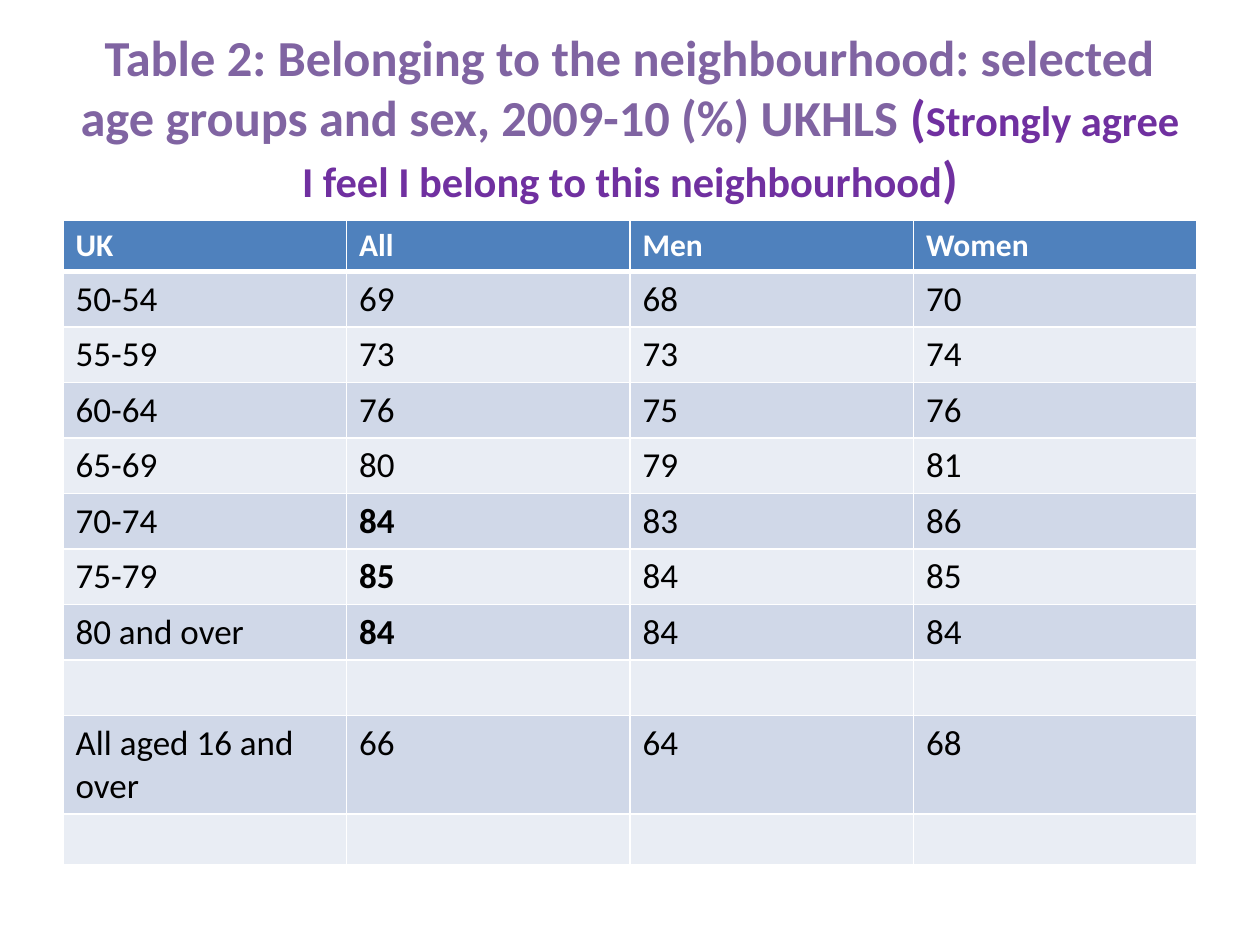
from dataclasses import dataclass

from lxml import etree
from pptx import Presentation
from pptx.dml.color import RGBColor
from pptx.enum.text import MSO_ANCHOR, MSO_AUTO_SIZE, PP_ALIGN
from pptx.oxml.ns import qn
from pptx.util import Inches, Pt

CENTER = PP_ALIGN.CENTER
MIDDLE = MSO_ANCHOR.MIDDLE
NO_AUTOFIT = MSO_AUTO_SIZE.NONE
TITLE_ONLY = 5


@dataclass(frozen=True)
class Theme:
    font: str = "Calibri"
    title: str = "8064A2"
    question: str = "7030A0"
    header_fill: str = "4F81BD"
    header_text: str = "FFFFFF"
    body_text: str = "000000"
    bands: tuple = ("D0D8E8", "E9EDF4")
    border: str = "FFFFFF"
    title_size: float = 28.8
    question_size: float = 24.3
    header_size: float = 18
    body_size: float = 20
    thin: float = 1
    thick: float = 3


class SlideBuilder:
    def __init__(self, deck, theme):
        self.deck = deck
        self.theme = theme
        self.page = deck.slides.add_slide(deck.slide_layouts[TITLE_ONLY])

    def place(self, left, top, width, height):
        """Turn shares of the slide's size into lengths."""
        wide, high = self.deck.slide_width, self.deck.slide_height
        return [round(share * size) for share, size in
                zip((left, top, width, height), (wide, high, wide, high))]

    def span(self, para, text, size, color, bold):
        span = para.add_run()
        span.text = text
        span.font.name = self.theme.font
        span.font.size = Pt(size)
        span.font.bold = bold
        span.font.color.rgb = RGBColor.from_string(color)

    def title(self, area, parts):
        box = self.page.shapes.title
        box.left, box.top, box.width, box.height = self.place(*area)
        frame = box.text_frame
        frame.word_wrap = True
        frame.auto_size = NO_AUTOFIT
        frame.vertical_anchor = MIDDLE
        para = frame.paragraphs[0]
        para.alignment = CENTER
        for text, size, color in parts:
            self.span(para, text, size, color, True)

    def borders(self, cell, bottom):
        properties = cell._tc.get_or_add_tcPr()
        thin = self.theme.thin
        sides = (("L", thin), ("R", thin), ("T", thin), ("B", bottom))
        for index, (side, width) in enumerate(sides):
            line = etree.Element(qn(f"a:ln{side}"), w=str(Pt(width)))
            fill = etree.SubElement(line, qn("a:solidFill"))
            etree.SubElement(fill, qn("a:srgbClr"), val=self.theme.border)
            properties.insert(index, line)

    def table(self, area, rows, heights, bold_cells):
        theme = self.theme
        table = self.page.shapes.add_table(
            len(rows), len(rows[0]), *self.place(*area)).table
        for row, height in zip(table.rows, heights):
            row.height = Inches(height)
        for r, values in enumerate(rows):
            header = r == 0
            fill = theme.header_fill if header else theme.bands[(r - 1) % 2]
            size = theme.header_size if header else theme.body_size
            color = theme.header_text if header else theme.body_text
            for c, text in enumerate(values):
                cell = table.cell(r, c)
                cell.fill.solid()
                cell.fill.fore_color.rgb = RGBColor.from_string(fill)
                # The heavy rule under the header belongs to both rows
                self.borders(cell, theme.thick if header else theme.thin)
                if r == 1:
                    top = cell._tc.tcPr.find(qn("a:lnT"))
                    top.set("w", str(Pt(theme.thick)))
                if text:
                    self.span(cell.text_frame.paragraphs[0], text, size,
                              color, header or (r, c) in bold_cells)


def main():
    deck = Presentation()
    deck.slide_width, deck.slide_height = Inches(10), Inches(7.5)
    theme = Theme()
    slide = SlideBuilder(deck, theme)

    # Title, with the survey question in a second colour
    slide.title((0.05, 0.04, 0.9, 1 / 6), [
        ("Table 2: Belonging to the neighbourhood: selected age groups "
         "and sex, 2009-10 (%) UKHLS ", theme.title_size, theme.title),
        ("(", theme.title_size, theme.question),
        ("Strongly agree I feel I belong to this neighbourhood",
         theme.question_size, theme.question),
        (")", theme.title_size, theme.question),
    ])

    # Percentages by age group and sex
    blank = ("",) * 4
    rows = [
        ("UK", "All", "Men", "Women"),
        ("50-54", "69", "68", "70"),
        ("55-59", "73", "73", "74"),
        ("60-64", "76", "75", "76"),
        ("65-69", "80", "79", "81"),
        ("70-74", "84", "83", "86"),
        ("75-79", "85", "84", "85"),
        ("80 and over", "84", "84", "84"),
        blank,
        ("All aged 16 and over", "66", "64", "68"),
        blank,
    ]
    heights = [0.4] + [0.44] * 8 + [0.78, 0.4]
    slide.table((0.05, 1.75 / 7.5, 0.9, sum(heights) / 7.5), rows, heights,
                bold_cells={(5, 1), (6, 1), (7, 1)})

    deck.save("out.pptx")


if __name__ == "__main__":
    main()
